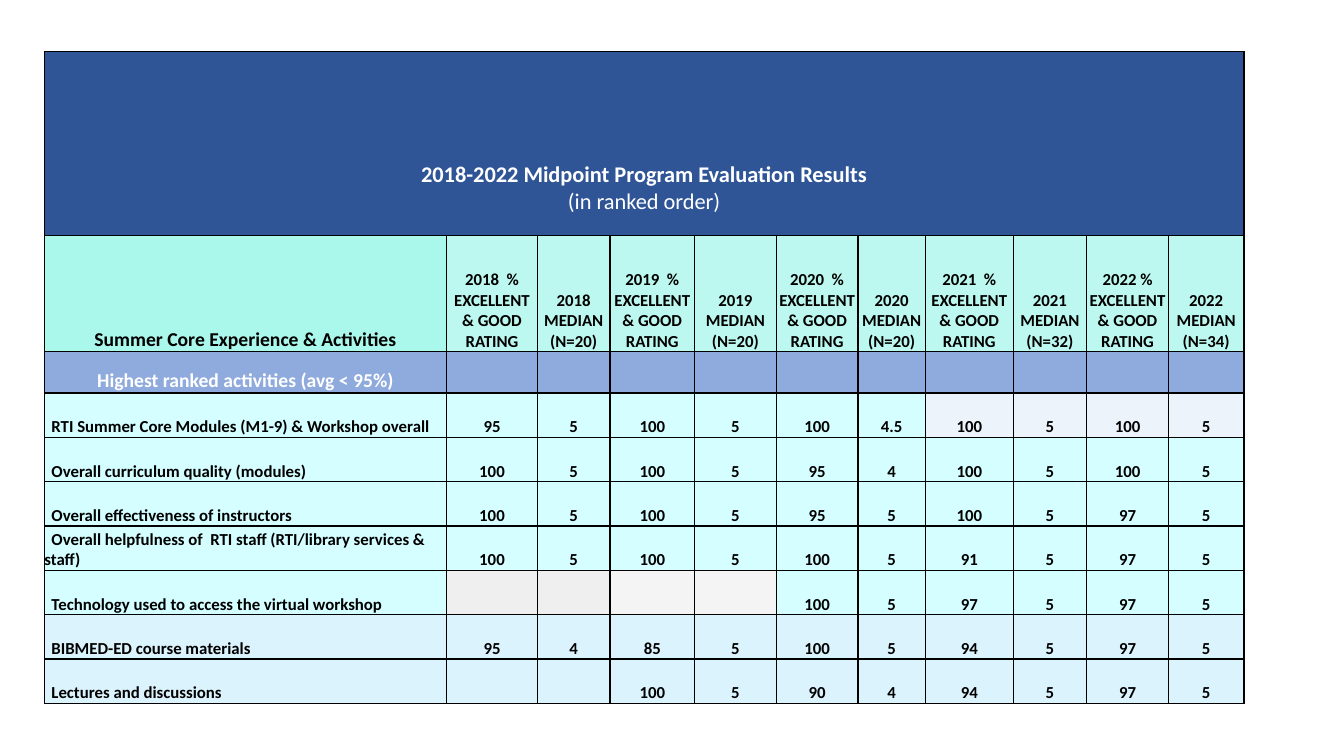
import dataclasses

import pptx
import pptx.dml.color
import pptx.enum.text
import pptx.oxml
import pptx.oxml.ns
import pptx.table
import pptx.util

SCALE = 9144
ALIGN = pptx.enum.text.PP_ALIGN


@dataclasses.dataclass(frozen=True)
class Tint:
    hue: str
    alpha: int = 100


@dataclasses.dataclass(frozen=True)
class Theme:
    font: str = "Calibri"
    ink: str = "000000"
    white: str = "FFFFFF"
    title: Tint = Tint("2F5597")
    head: Tint = Tint("AAF7EB")
    soft: Tint = Tint("AAF7EB", 79)
    band: Tint = Tint("8FAADC")
    aqua: Tint = Tint("00FDFF", 17)
    pale: Tint = Tint("BDD7EE", 28)
    gray: Tint = Tint("A6A6A6", 17)
    ash: Tint = Tint("BFBFBF", 17)
    sky: Tint = Tint("00B0F0", 14)
    big: int = 16
    mid: int = 14
    small: int = 12


THEME = Theme()


@dataclasses.dataclass(frozen=True)
class Row:
    label: str
    marks: tuple[str, ...]
    tints: tuple[Tint, ...]


@dataclasses.dataclass(frozen=True)
class Year:
    rate: str
    count: int


LEFT, TOP = 44, 51
COLS = (399, 90, 72, 84, 81, 81, 67, 87, 73, 81, 75)
TALL = (183, 115, 41) + (44,) * 7
INDENT = 7
TITLE_GAP = 20

YEARS = {
    2018: Year("2018  %", 20),
    2019: Year("2019  %", 20),
    2020: Year("2020  %", 20),
    2021: Year("2021  %", 32),
    2022: Year("2022 %", 34),
}
AQUA = (THEME.aqua,) * 11
SKY = (THEME.sky,) * 11
BLANK = ("",)

ROWS = (
    Row("RTI Summer Core Modules (M1-9) & Workshop overall",
        ("95", "5", "100", "5", "100", "4.5", "100", "5", "100", "5"),
        (THEME.aqua,) * 7 + (THEME.pale,) * 4),
    Row("Overall curriculum quality (modules)",
        ("100", "5", "100", "5", "95", "4", "100", "5", "100", "5"), AQUA),
    Row("Overall effectiveness of instructors",
        ("100", "5", "100", "5", "95", "5", "100", "5", "97", "5"), AQUA),
    Row("Overall helpfulness of  RTI staff (RTI/library services & staff)",
        ("100", "5", "100", "5", "100", "5", "91", "5", "97", "5"), AQUA),
    Row("Technology used to access the virtual workshop",
        BLANK * 4 + ("100", "5", "97", "5", "97", "5"),
        (THEME.aqua,) + (THEME.gray,) * 2 + (THEME.ash,) * 2 + (THEME.aqua,) * 6),
    Row("BIBMED-ED course materials",
        ("95", "4", "85", "5", "100", "5", "94", "5", "97", "5"), SKY),
    Row("Lectures and discussions",
        BLANK * 2 + ("100", "5", "90", "4", "94", "5", "97", "5"), SKY),
)


def px(size: int) -> pptx.util.Emu:
    return pptx.util.Emu(size * SCALE)


def dress(cell: pptx.table._Cell, tint: Tint) -> None:
    props = cell._tc.get_or_add_tcPr()
    for side in ("lnL", "lnR", "lnT", "lnB"):
        props.append(pptx.oxml.parse_xml(
            f'<a:{side} {pptx.oxml.ns.nsdecls("a")} w="{pptx.util.Pt(1)}">'
            f'<a:solidFill><a:srgbClr val="{THEME.ink}"/></a:solidFill></a:{side}>'))
    cell.fill.solid()
    cell.fill.fore_color.rgb = pptx.dml.color.RGBColor.from_string(tint.hue)
    if tint.alpha < 100:
        paint = props.find(".//" + pptx.oxml.ns.qn("a:solidFill") + "[last()]")
        paint = props.find(pptx.oxml.ns.qn("a:solidFill"))
        paint[0].append(pptx.oxml.parse_xml(
            f'<a:alpha {pptx.oxml.ns.nsdecls("a")} val="{tint.alpha * 1000}"/>'))
    cell.margin_left = cell.margin_right = cell.margin_top = cell.margin_bottom = 0
    cell.vertical_anchor = pptx.enum.text.MSO_ANCHOR.BOTTOM


def write(cell: pptx.table._Cell, lines: tuple[str, ...], size: int,
          hue: str = THEME.ink, align: ALIGN = ALIGN.CENTER) -> None:
    for spot, line in enumerate(lines):
        frame = cell.text_frame
        para = frame.add_paragraph() if spot else frame.paragraphs[0]
        para.alignment = align
        if align == ALIGN.LEFT:
            para._p.get_or_add_pPr().set("indent", str(px(INDENT)))
        run = para.add_run()
        run.text = line
        run.font.name = THEME.font
        run.font.size = pptx.util.Pt(size)
        run.font.bold = spot == 0
        run.font.color.rgb = pptx.dml.color.RGBColor.from_string(hue)


def draw(grid: pptx.table.Table) -> None:
    tints = (
        (THEME.title,) * 11,
        (THEME.head,) + (THEME.soft,) * 10,
        (THEME.band,) * 11,
    ) + tuple(row.tints for row in ROWS)
    for down, line in enumerate(tints):
        for across, tint in enumerate(line):
            dress(grid.cell(down, across), tint)

    title = grid.cell(0, 0)
    title.merge(grid.cell(0, len(COLS) - 1))
    title.margin_bottom = px(TITLE_GAP)
    write(title, ("2018-2022 Midpoint Program Evaluation Results", "(in ranked order)"),
          THEME.big, THEME.white)

    write(grid.cell(1, 0), ("Summer Core Experience & Activities",), THEME.mid)
    for spot, (name, year) in enumerate(YEARS.items()):
        across = 1 + 2 * spot
        write(grid.cell(1, across), (f"{year.rate} EXCELLENT & GOOD RATING",), THEME.small)
        write(grid.cell(1, across + 1), (f"{name} MEDIAN (N={year.count})",), THEME.small)
    write(grid.cell(2, 0), ("Highest ranked activities (avg < 95%)",), THEME.mid, THEME.white)

    for down, row in enumerate(ROWS, 3):
        write(grid.cell(down, 0), (row.label,), THEME.small, align=ALIGN.LEFT)
        for across, mark in enumerate(row.marks, 1):
            if mark:
                write(grid.cell(down, across), (mark,), THEME.small)


def main() -> None:
    deck = pptx.Presentation()
    deck.slide_width, deck.slide_height = px(1333), px(750)
    slide = deck.slides.add_slide(deck.slide_layouts[6])
    grid = slide.shapes.add_table(len(TALL), len(COLS), px(LEFT), px(TOP),
                                  px(sum(COLS)), px(sum(TALL))).table
    grid.first_row = grid.horz_banding = False
    for col, wide in zip(grid.columns, COLS):
        col.width = px(wide)
    for row, tall in zip(grid.rows, TALL):
        row.height = px(tall)
    draw(grid)
    deck.save("out.pptx")


if __name__ == "__main__":
    main()
